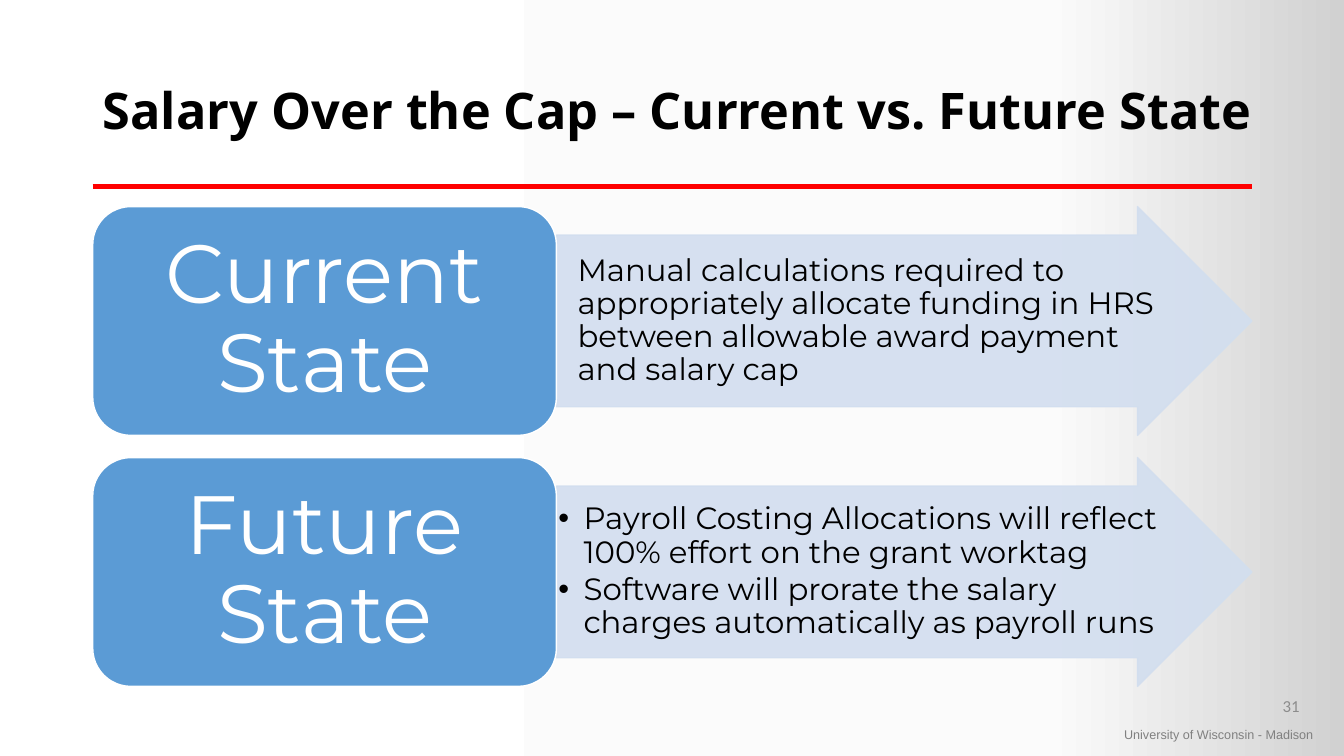
"""Builds the salary cap slide comparing the current and the future state."""
import copy

import lxml.etree
import pptx
import pptx.dml.color
import pptx.enum.shapes
import pptx.enum.text
import pptx.oxml.ns
import pptx.util

COLORS = {
    "white": "FFFFFF", "near_white": "FBFBFB", "edge": "D1D1D1",
    "black": "000000", "rule": "FF0000", "label": "5B9BD5",
    "arrow": "D2DEEF", "footer": "808080", "number": "8C8C8C",
}
MARGIN, COLUMN = 6.9, 17.25
FIRST_ROW, ROW_PITCH, ROW_HEIGHT = 27.33, 33.2, 30.27
STATES = [
    ("Current State", False, [
        "Manual calculations required to appropriately allocate funding in HRS "
        "between allowable award payment and salary cap"]),
    ("Future State", True, [
        "Payroll Costing Allocations will reflect 100% effort on the grant worktag",
        "Software will prorate the salary charges automatically as payroll runs"]),
]
ALIGN = pptx.enum.text.PP_ALIGN
SHAPE = pptx.enum.shapes.MSO_SHAPE


def color(name):
    return pptx.dml.color.RGBColor.from_string(COLORS[name])


def add_xml(parent, tag, **attributes):
    return lxml.etree.SubElement(parent, pptx.oxml.ns.qn(tag), attributes)


def write(shape, lines, size, ink, font="Montserrat", bold=False, align=ALIGN.LEFT,
          spacing=0.9, after=0, insets=(0.1, 0.05, 0.1, 0.05), indent=None, bullet=False):
    frame = shape.text_frame
    frame.word_wrap = True
    frame.auto_size = pptx.enum.text.MSO_AUTO_SIZE.NONE
    frame.vertical_anchor = pptx.enum.text.MSO_ANCHOR.MIDDLE
    (frame.margin_left, frame.margin_top,
     frame.margin_right, frame.margin_bottom) = map(pptx.util.Inches, insets)
    for index, line in enumerate(lines):
        paragraph = frame.add_paragraph() if index else frame.paragraphs[0]
        paragraph.text = line
        paragraph.alignment = align
        paragraph.line_spacing = spacing
        paragraph.space_before = pptx.util.Pt(0)
        paragraph.space_after = pptx.util.Pt(after)
        if indent is not None:
            properties = paragraph._p.get_or_add_pPr()
            hanging = -indent if bullet else 0
            properties.set("marL", str(pptx.util.Inches(indent)))
            properties.set("indent", str(pptx.util.Inches(hanging)))
            if bullet:
                add_xml(properties, "a:buChar", char="•")
            else:
                add_xml(properties, "a:buNone")
        paragraph.font.size = pptx.util.Pt(size)
        paragraph.font.name = font
        paragraph.font.bold = bold
        paragraph.font.color.rgb = color(ink)


class SlideBuilder:
    """Places elements by percentages of the slide's width and height."""

    def __init__(self, presentation, layout):
        self.width = presentation.slide_width
        self.height = presentation.slide_height
        self.slide = presentation.slides.add_slide(presentation.slide_layouts[layout])

    def box(self, left, top, width, height):
        return (round(self.width * left / 100), round(self.height * top / 100),
                round(self.width * width / 100), round(self.height * height / 100))

    def background(self, stops):
        fill = self.slide.background.fill
        fill.gradient()
        fill.gradient_angle = 0
        stop_list = self.slide._element.find(".//" + pptx.oxml.ns.qn("a:gsLst"))
        stop_list.append(copy.deepcopy(stop_list[-1]))
        for stop, (position, name) in zip(fill.gradient_stops, stops):
            stop.position = position
            stop.color.rgb = color(name)

    def placeholder(self, index, box, lines, **style):
        shape = self.slide.placeholders[index]
        shape.left, shape.top, shape.width, shape.height = self.box(*box)
        self.slide.shapes._spTree.append(shape._element)
        write(shape, lines, **style)

    def text(self, box, line, **style):
        write(self.slide.shapes.add_textbox(*self.box(*box)), [line], **style)

    def shape(self, kind, box, fill, line, opacity=100):
        shape = self.slide.shapes.add_shape(kind, *self.box(*box))
        shape.shadow.inherit = False
        shape.fill.solid()
        shape.fill.fore_color.rgb = color(fill)
        shape.line.color.rgb = color(line)
        shape.line.width = pptx.util.Pt(1)
        if opacity < 100:
            for tint in shape._element.spPr.iter(pptx.oxml.ns.qn("a:srgbClr")):
                add_xml(tint, "a:alpha", val=str(opacity * 1000))
        return shape

    def rule(self, left, top, width):
        x, y, length, _ = self.box(left, top, width, 0)
        line = self.slide.shapes.add_connector(
            pptx.enum.shapes.MSO_CONNECTOR.STRAIGHT, x, y, x + length, y)
        line.line.color.rgb = color("rule")
        line.line.width = pptx.util.Pt(3)
        add_xml(line._element.spPr, "a:effectLst")

    def state(self, row, name, bullet, lines):
        top = FIRST_ROW + row * ROW_PITCH
        arrow_left = MARGIN + 2 * COLUMN
        arrow = self.shape(SHAPE.RIGHT_ARROW, (arrow_left, top, 3 * COLUMN, ROW_HEIGHT),
                           "arrow", "arrow", opacity=90)
        arrow.adjustments[0] = 0.75
        self.placeholder(row + 1, (arrow_left, top + ROW_HEIGHT / 8, 45.4, ROW_HEIGHT * 0.75),
                         lines, size=22, ink="black", after=3, insets=(0.02,) * 4,
                         indent=0.25 if bullet else 0.19, bullet=bullet)
        label = self.shape(SHAPE.ROUNDED_RECTANGLE, (MARGIN, top, 2 * COLUMN, ROW_HEIGHT),
                           "label", "white")
        write(label, [name], size=59, ink="white", align=ALIGN.CENTER,
              insets=(0.25, 0.12, 0.25, 0.12))


def main():
    presentation = pptx.Presentation()
    presentation.slide_width = pptx.util.Inches(13.33)
    presentation.slide_height = pptx.util.Inches(7.5)
    builder = SlideBuilder(presentation, layout=3)
    builder.background([(0, "white"), (0.78, "near_white"), (1, "edge")])
    builder.text((82.9, 95.47, 16.5, 3.33), "University of Wisconsin - Madison",
                 size=9, ink="footer", font="Arial", spacing=1)
    builder.rule(MARGIN, 24.67, 5 * COLUMN)
    builder.placeholder(0, (MARGIN, 5.33, 90.62, 19.33),
                        ["Salary Over the Cap – Current vs. Future State"],
                        size=36, ink="black", font="Noto Sans", bold=True)
    for row, state in enumerate(STATES):
        builder.state(row, *state)
    builder.text((74.94, 90.67, 22.5, 5.33), "31", size=12, ink="number",
                 font="Calibri", align=ALIGN.RIGHT, spacing=1)
    presentation.save("out.pptx")


if __name__ == "__main__":
    main()
